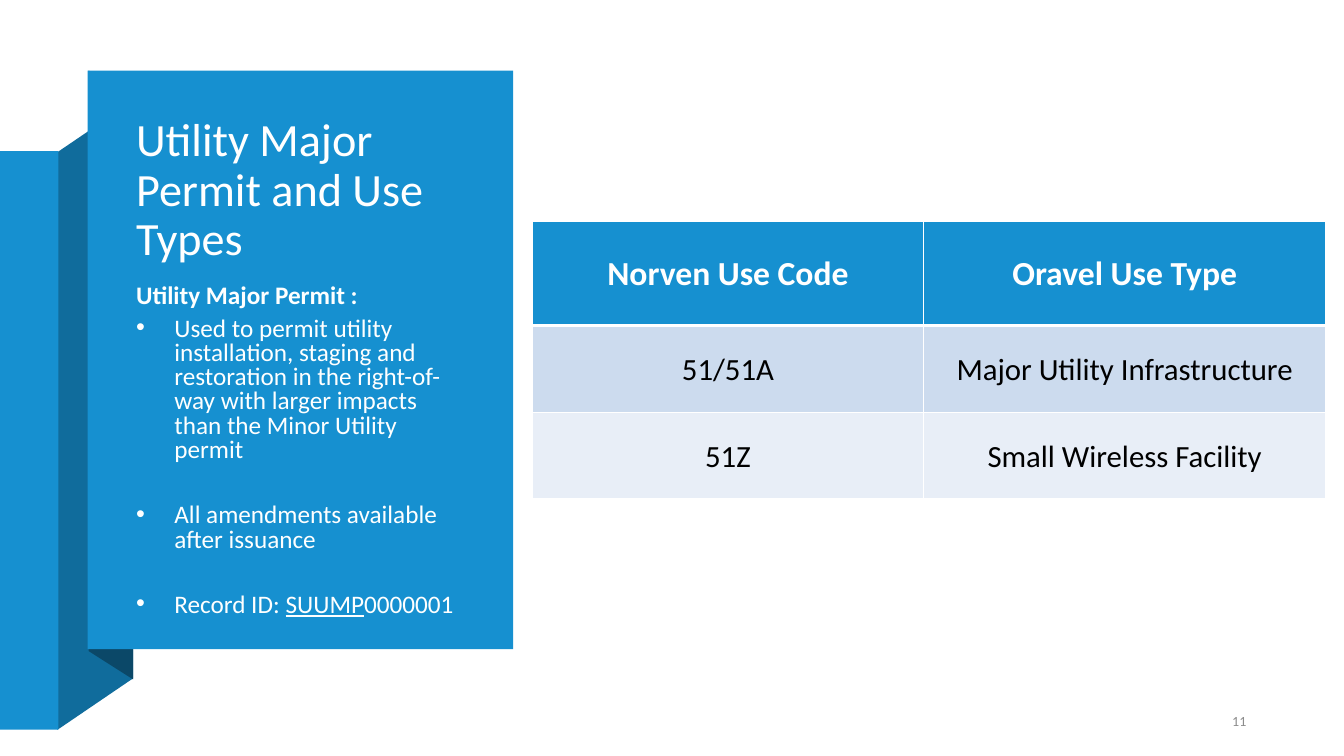
"""Build the slide on utility major permits and their use types."""
from lxml.etree import SubElement
from pptx import Presentation
from pptx.dml.color import RGBColor
from pptx.enum.shapes import MSO_SHAPE
from pptx.enum.text import MSO_ANCHOR, MSO_AUTO_SIZE, PP_ALIGN
from pptx.oxml.ns import qn
from pptx.util import Pt

PX = 9144
BLUE, WHITE = "1690D0", "FFFFFF"
USES = [
    ("Norven Use Code", "Oravel Use Type"),
    ("51/51A", "Major Utility Infrastructure"),
    ("51Z", "Small Wireless Facility"),
]
POINTS = [
    (6, ["Used to permit utility installation, staging and restoration in the "
         "right-of-way with larger impacts than the Minor Utility permit"]),
    (29.5, ["All amendments available after issuance"]),
    (29.5, ["Record ID: ", "SUUMP", "0000001"]),
]


def px(*nums):
    return [num * PX for num in nums]


def paint(fill, color):
    fill.solid()
    fill.fore_color.rgb = RGBColor.from_string(color)


def style(para, size, color, bold=False, align=PP_ALIGN.LEFT):
    font = para.font
    font.name, font.size, font.bold = "Calibri", Pt(size), bold
    paint(font.fill, color)
    para.alignment = align


def finish(shape, color):
    paint(shape.fill, color)
    shape.line.fill.background()
    shape.shadow.inherit = False


def panel(slide, box, color):
    finish(slide.shapes.add_shape(MSO_SHAPE.RECTANGLE, *px(*box)), color)


def fold(slide, points, color):
    form = slide.shapes.build_freeform(*points[0], scale=PX)
    form.add_line_segments(points[1:], close=True)
    finish(form.convert_to_shape(), color)


def place(shape, box, anchor):
    shape.left, shape.top, shape.width, shape.height = px(*box)
    frame = shape.text_frame
    frame.word_wrap = True
    frame.auto_size = MSO_AUTO_SIZE.NONE
    frame.vertical_anchor = anchor
    shape.element.getparent().append(shape.element)
    return frame


def bullet(para, mark=None):
    props = para._p.get_or_add_pPr()
    indent = 38 * PX if mark else 0
    props.set("marL", str(indent))
    props.set("indent", str(-indent))
    if mark:
        SubElement(props, qn("a:buFont")).set("typeface", "Arial")
        SubElement(props, qn("a:buChar")).set("char", mark)
    else:
        SubElement(props, qn("a:buNone"))


def item(para, texts, before, mark=None):
    bullet(para, mark)
    style(para, 18, "FEFFFF", bold=not mark)
    para.line_spacing = 0.8
    para.space_before = Pt(before)
    for text in texts:
        run = para.add_run()
        run.text = text
        if text == "SUUMP":
            run.font.underline = True


def edge(cell, side, width):
    line = SubElement(cell._tc.get_or_add_tcPr(), qn("a:ln" + side))
    line.set("w", str(Pt(width)))
    fill = SubElement(line, qn("a:solidFill"))
    SubElement(fill, qn("a:srgbClr")).set("val", WHITE)


def grid(slide, rows):
    table = slide.shapes.add_table(3, 2, *px(528, 220, 787, 275)).table
    for col, width in zip(table.columns, px(388, 399)):
        col.width = width
    for row, height in zip(table.rows, px(103, 86, 86)):
        row.height = height
    for r, texts in enumerate(rows):
        for c, text in enumerate(texts):
            cell = table.cell(r, c)
            for side in "LRTB":
                thick = (r, side) in [(0, "B"), (1, "T")]
                edge(cell, side, 3 if thick else 1)
            paint(cell.fill, [BLUE, "CCDBEE", "E8EEF7"][r])
            cell.vertical_anchor = MSO_ANCHOR.MIDDLE
            cell.text = text
            para = cell.text_frame.paragraphs[0]
            head = r == 0
            style(para, 24 if head else 22, WHITE if head else "000000",
                  head, PP_ALIGN.CENTER)
            if not head:
                para.line_spacing = 1.07


def main():
    deck = Presentation()
    deck.slide_width, deck.slide_height = px(1333, 750)
    slide = deck.slides.add_slide(deck.slide_layouts[1])
    title, body = slide.placeholders

    fold(slide, [(57, 724), (132, 673), (132, 100), (57, 151)], "106C9C")
    panel(slide, (0, 150, 58, 574), BLUE)
    fold(slide, [(88, 646), (132, 674), (132, 99), (88, 70)], "0B4868")
    panel(slide, (87, 70, 422, 574), BLUE)

    frame = place(title, (125, 109, 348, 161), MSO_ANCHOR.MIDDLE)
    frame.text = "Utility Major Permit and Use Types"
    style(frame.paragraphs[0], 33, WHITE)
    frame.paragraphs[0].line_spacing = 0.9

    frame = place(body, (125, 278, 350, 341), MSO_ANCHOR.TOP)
    item(frame.paragraphs[0], ["Utility Major Permit :"], 6)
    for before, texts in POINTS:
        item(frame.add_paragraph(), texts, before, "•")

    box = (1171, 698, 75, 35)
    frame = place(slide.shapes.add_textbox(*px(*box)), box, MSO_ANCHOR.MIDDLE)
    frame.text = "11"
    style(frame.paragraphs[0], 10, "8C8C8C", align=PP_ALIGN.RIGHT)
    frame.paragraphs[0].space_after = Pt(6)

    grid(slide, USES)
    deck.save("out.pptx")


if __name__ == "__main__":
    main()
